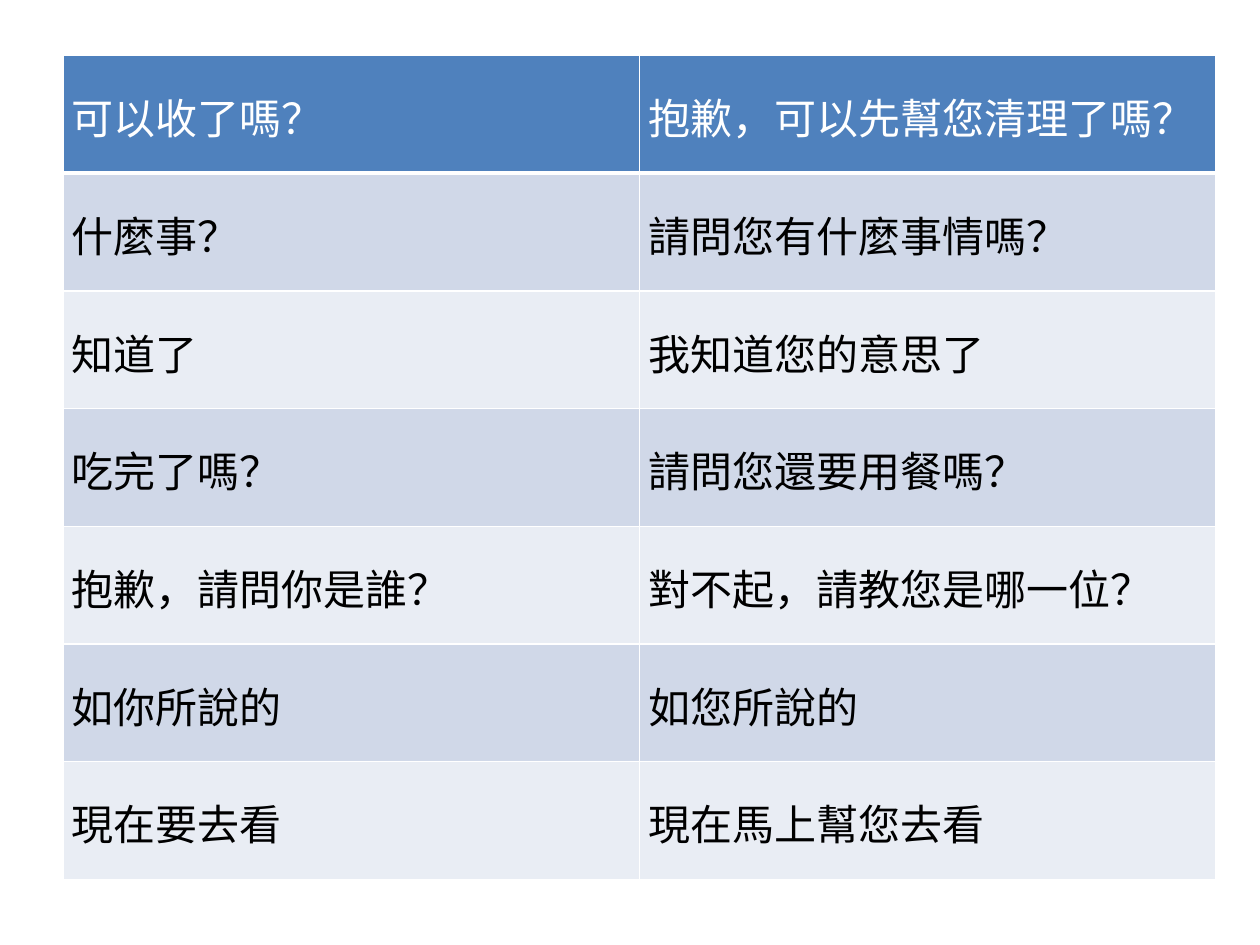
from dataclasses import dataclass

from lxml.etree import SubElement
from pptx import Presentation
from pptx.dml.color import RGBColor
from pptx.enum.text import MSO_ANCHOR, PP_ALIGN
from pptx.oxml.ns import qn
from pptx.util import Inches, Pt


@dataclass(frozen=True)
class Theme:
    font: str = "Calibri"
    size: int = 24
    line_spacing: float = 1.5
    header_fill: str = "4F81BD"
    header_text: str = "FFFFFF"
    body_text: str = "000000"
    bands: tuple = ("D0D8E8", "E9EDF4")
    border: str = "FFFFFF"
    border_width: int = 1
    header_rule: int = 3


@dataclass(frozen=True)
class Box:
    left: int
    top: int
    width: int
    height: int


THEME = Theme()
PHRASES = [
    ("可以收了嗎？", "抱歉，可以先幫您清理了嗎？"),
    ("什麼事？", "請問您有什麼事情嗎？"),
    ("知道了", "我知道您的意思了"),
    ("吃完了嗎？", "請問您還要用餐嗎？"),
    ("抱歉，請問你是誰？", "對不起，請教您是哪一位？"),
    ("如你所說的", "如您所說的"),
    ("現在要去看", "現在馬上幫您去看"),
]


def set_borders(cell, bottom_width):
    properties = cell._tc.get_or_add_tcPr()
    widths = dict.fromkeys(("lnL", "lnR", "lnT"), THEME.border_width)
    widths["lnB"] = bottom_width
    for position, (side, width) in enumerate(widths.items()):
        line = SubElement(properties, qn(f"a:{side}"), w=str(Pt(width)))
        fill = SubElement(line, qn("a:solidFill"))
        SubElement(fill, qn("a:srgbClr"), val=THEME.border)
        # Border lines must come before the cell's fill.
        properties.insert(position, line)


def fill_cell(cell, text, fill, color):
    cell.margin_left = cell.margin_right = Inches(0.07)
    cell.margin_top = cell.margin_bottom = 0
    cell.vertical_anchor = MSO_ANCHOR.TOP
    cell.fill.solid()
    cell.fill.fore_color.rgb = RGBColor.from_string(fill)
    para = cell.text_frame.paragraphs[0]
    para.alignment = PP_ALIGN.LEFT
    para.line_spacing = THEME.line_spacing
    span = para.add_run()
    span.text = text
    span.font.name = THEME.font
    span.font.size = Pt(THEME.size)
    span.font.bold = False
    span.font.color.rgb = RGBColor.from_string(color)


def add_phrase_table(page, box, phrases):
    table = page.shapes.add_table(
        len(phrases), len(phrases[0]), box.left, box.top, box.width, box.height
    ).table
    for row_index, row in enumerate(phrases):
        is_header = row_index == 0
        if is_header:
            fill, color, rule = THEME.header_fill, THEME.header_text, THEME.header_rule
        else:
            fill = THEME.bands[(row_index - 1) % len(THEME.bands)]
            color, rule = THEME.body_text, THEME.border_width
        for column_index, text in enumerate(row):
            cell = table.cell(row_index, column_index)
            fill_cell(cell, text, fill, color)
            set_borders(cell, rule)


def main():
    deck = Presentation()
    deck.slide_width, deck.slide_height = Inches(10), Inches(7.5)
    page = deck.slides.add_slide(deck.slide_layouts[6])
    box = Box(Inches(0.5), Inches(0.44), Inches(9.15), Inches(6.54))
    add_phrase_table(page, box, PHRASES)
    deck.save("out.pptx")


if __name__ == "__main__":
    main()
